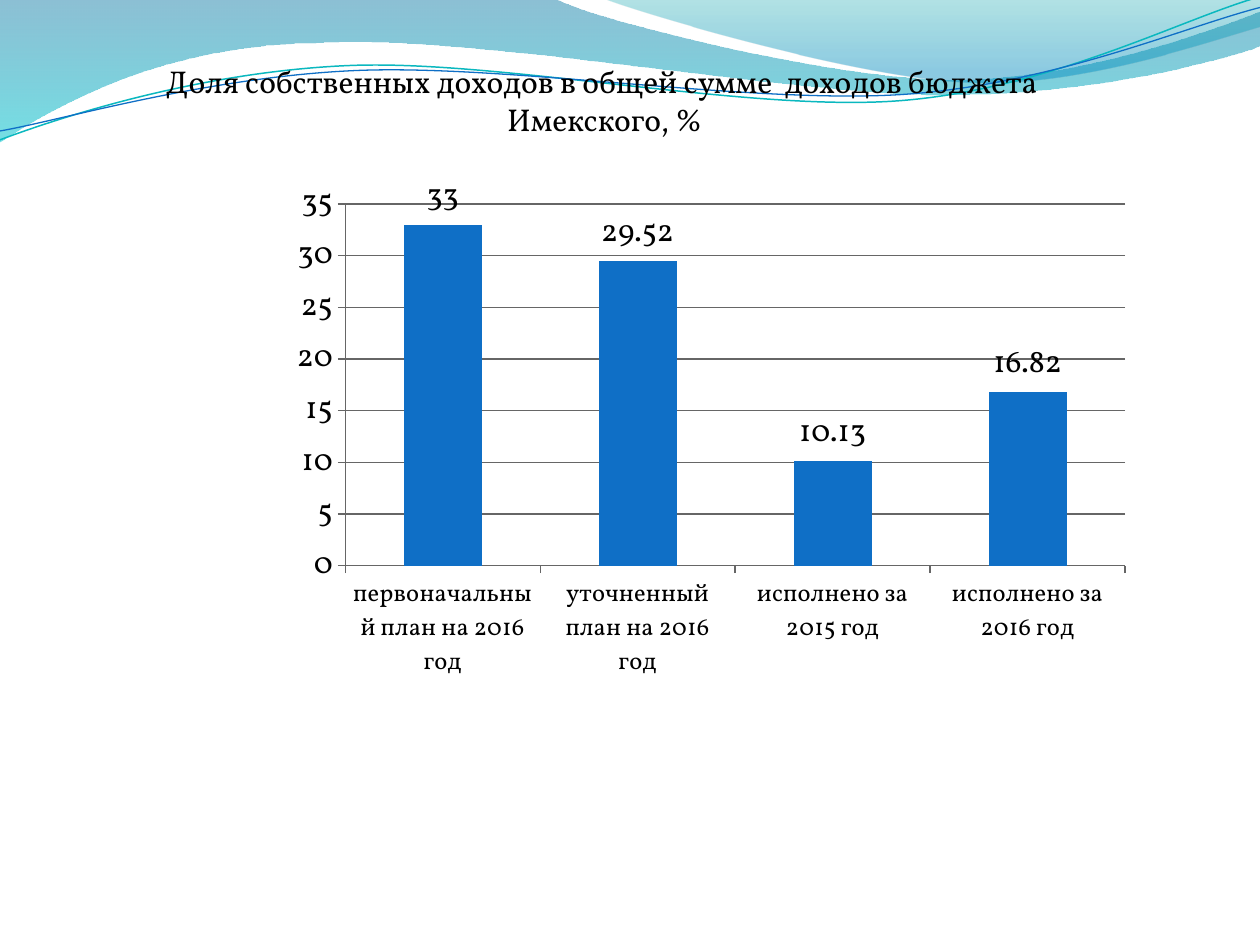
from dataclasses import dataclass
from math import cos, radians, sin

from lxml.etree import SubElement
from pptx import Presentation
from pptx.chart.data import CategoryChartData
from pptx.dml.color import RGBColor
from pptx.enum.chart import XL_CHART_TYPE as ChartType
from pptx.enum.chart import XL_LABEL_POSITION as LabelPosition
from pptx.enum.chart import XL_TICK_MARK as TickMark
from pptx.enum.text import MSO_ANCHOR as Anchor
from pptx.enum.text import MSO_AUTO_SIZE as AutoSize
from pptx.enum.text import PP_ALIGN as Align
from pptx.oxml import parse_xml
from pptx.oxml.ns import nsdecls, qn
from pptx.util import Inches, Pt

FONT = "Vollkorn"
BLACK, GRID_GREY, BLUE, TEAL = "000000", "666666", "0F6FC6", "0AB8BF"
CELL = Inches(1)  # the slide is a grid of 10 columns by 7.5 rows
COLUMNS, ROWS = 10, 7.5
LINE_TILT = 357.3

Point = tuple[float, float]


@dataclass(frozen=True)
class Box:
    column: float
    row: float
    columns: float
    rows: float

    def emu(self) -> list[int]:
        return [round(n * CELL) for n in (self.column, self.row, self.columns, self.rows)]


@dataclass(frozen=True)
class GradientStop:
    position: int
    color: str
    opacity: int


@dataclass(frozen=True)
class Band:
    """Segments hold one point for a line, three for a Bezier curve."""
    start: Point
    segments: tuple[tuple[Point, ...], ...]
    stops: tuple[GradientStop, ...]


@dataclass(frozen=True)
class WavyLine:
    start: Point
    segments: tuple[tuple[Point, ...], ...]
    center: Point
    color: str
    width: float


BANDS = (
    # Across the whole top
    Band((0, -0.01), (
        ((4.4, -0.01),),
        ((4.76, 0.17), (6.64, 0.63), (7.58, 0.63)),
        ((8.53, 0.63), (9.58, 0.26), (10, 0.09)),
        ((10.01, 0.36),),
        ((9.83, 0.44), (8.7, 0.76), (7.46, 0.75)),
        ((6.22, 0.75), (3.82, 0.28), (2.57, 0.34)),
        ((1.29, 0.35), (0.46, 0.83), (-0.01, 1.13)),
    ), (GradientStop(0, "0074A1", 45), GradientStop(100, "00C6CF", 55))),
    # At the top right
    Band((4.79, -0.01), (
        ((5.09, 0.11), (6.82, 0.62), (7.69, 0.65)),
        ((8.56, 0.69), (9.61, 0.32), (10, 0.21)),
        ((10, 0),),
    ), (GradientStop(0, "00A1A9", 30), GradientStop(80, "008BBF", 45))),
)
WAVY_LINES = (
    WavyLine((0, 1.11), (
        ((0.48, 0.93), (1.58, 0.57), (2.77, 0.52)),
        ((3.95, 0.47), (5.93, 0.89), (7.13, 0.8)),
        ((8.33, 0.71), (9.38, 0.15), (9.98, -0.02)),
    ), (4.99, 0.57), TEAL, 0.85),
    WavyLine((0, 1.04), (
        ((0.47, 0.96), (1.64, 0.61), (2.83, 0.56)),
        ((4.03, 0.51), (5.97, 0.83), (7.17, 0.75)),
        ((8.36, 0.67), (9.41, 0.21), (10, 0.06)),
    ), (5, 0.59), BLUE, 0.75),
)

TITLE_BOX = Box(0.27, 0.44, 9.06, 0.71)
TITLE_LINES = ("Доля собственных доходов в общей сумме  доходов бюджета ", "Имекского, %")

CHART_BOX = Box(0.9, 1.15, 8.27, 6.22)
PLOT_BOX = Box(1.84, 0.47, 6.19, 2.87)  # measured from the chart's corner
INCOME_SHARES = {
    "первоначальный план на 2016 год": 33,
    "уточненный план на 2016 год": 29.52,
    "исполнено за 2015 год": 10.13,
    "исполнено за 2016 год": 16.82,
}
SERIES = {"Series 1": (BLUE, tuple(INCOME_SHARES.values())),
          "Series 2": ("009DD9", ()),
          "Series 3": ("0BD0D9", ())}


def rgb(color: str) -> RGBColor:
    return RGBColor.from_string(color)


def set_font(font, size: float) -> None:
    font.name, font.size, font.bold = FONT, Pt(size), False
    font.color.rgb = rgb(BLACK)


def set_line(line, color: str, width: float) -> None:
    line.color.rgb, line.width = rgb(color), Pt(width)


def turn(point: Point, center: Point, degrees: float) -> Point:
    angle = radians(degrees)
    dx, dy = point[0] - center[0], point[1] - center[1]
    return (center[0] + dx * cos(angle) - dy * sin(angle),
            center[1] + dx * sin(angle) + dy * cos(angle))


def draw_outline(shapes, start: Point, segments, close: bool):
    """Lay a polygon through all points, then bend each three of a curve."""
    points = [(round(x * CELL), round(y * CELL))
              for x, y in (start, *(point for segment in segments for point in segment))]
    builder = shapes.build_freeform(*points[0])
    builder.add_line_segments(points[1:], close=close)
    shape = builder.convert_to_shape()
    shape.shadow.inherit = False
    sides = iter(shape.element.findall(".//" + qn("a:lnTo")))
    for segment in segments:
        group = [next(sides) for _ in segment]
        if len(group) == 3:
            curve = parse_xml(f'<a:cubicBezTo {nsdecls("a")}/>')
            group[0].addprevious(curve)
            for side in group:
                curve.append(side[0])
                side.getparent().remove(side)
    return shape


def draw_band(shapes, band: Band) -> None:
    shape = draw_outline(shapes, band.start, band.segments, True)
    shape.line.fill.background()
    stops = "".join(
        f'<a:gs pos="{stop.position * 1000}"><a:srgbClr val="{stop.color}">'
        f'<a:alpha val="{stop.opacity * 1000}"/></a:srgbClr></a:gs>'
        for stop in band.stops)
    gradient = parse_xml(
        f'<a:gradFill {nsdecls("a")} rotWithShape="1"><a:gsLst>{stops}</a:gsLst>'
        '<a:lin ang="5400000" scaled="0"/></a:gradFill>')
    shape.element.spPr.find(qn("a:custGeom")).addnext(gradient)


def draw_wavy_line(shapes, wave: WavyLine) -> None:
    """Level the points first; the shape's rotation tilts them back."""
    start = turn(wave.start, wave.center, -LINE_TILT)
    segments = [[turn(point, wave.center, -LINE_TILT) for point in segment]
                for segment in wave.segments]
    shape = draw_outline(shapes, start, segments, False)
    shape.rotation = LINE_TILT
    shape.fill.background()
    set_line(shape.line, wave.color, wave.width)


def write_title(slide) -> None:
    title = slide.shapes.title
    title.left, title.top, title.width, title.height = TITLE_BOX.emu()
    frame = title.text_frame
    frame.word_wrap, frame.vertical_anchor = True, Anchor.TOP
    frame.auto_size = AutoSize.SHAPE_TO_FIT_TEXT
    for index, text in enumerate(TITLE_LINES):
        paragraph = frame.add_paragraph() if index else frame.paragraphs[0]
        paragraph.alignment = Align.CENTER
        run = paragraph.add_run()
        run.text = text
        set_font(run.font, 18)
    # Bring the title in front of the waves
    title.element.getparent().append(title.element)


def place_plot(chart) -> None:
    """Fix the inner plot area at shares of the chart's size."""
    plot_area = chart.element.find(".//" + qn("c:plotArea"))
    for old in plot_area.findall(qn("c:layout")):
        plot_area.remove(old)
    layout = parse_xml(f'<c:layout {nsdecls("c")}><c:manualLayout/></c:layout>')
    settings = {"layoutTarget": "inner", "xMode": "edge", "yMode": "edge",
                "x": PLOT_BOX.column / CHART_BOX.columns, "y": PLOT_BOX.row / CHART_BOX.rows,
                "w": PLOT_BOX.columns / CHART_BOX.columns, "h": PLOT_BOX.rows / CHART_BOX.rows}
    for name, value in settings.items():
        SubElement(layout[0], qn(f"c:{name}")).set("val", str(value))
    plot_area.insert(0, layout)


def label_columns(series, values) -> None:
    for index, value in enumerate(values):
        label = series.points[index].data_label
        if index == 0:  # the first label is typed text
            run = label.text_frame.paragraphs[0].add_run()
            run.text = str(value)
            set_font(run.font, 18)
        else:
            set_font(label.font, 18)
        label.position = LabelPosition.OUTSIDE_END


def draw_chart(slide) -> None:
    data = CategoryChartData()
    data.categories = list(INCOME_SHARES)
    for name, (_, values) in SERIES.items():
        data.add_series(name, values)
    chart = slide.shapes.add_chart(ChartType.COLUMN_CLUSTERED, *CHART_BOX.emu(), data).chart
    chart.has_title = chart.has_legend = False
    set_font(chart.font, 18)
    place_plot(chart)

    # Columns and their values; a series without values takes no room
    plot = chart.plots[0]
    plot.gap_width, plot.vary_by_categories = 150, False
    for series, (color, values) in zip(plot.series, SERIES.values()):
        series.format.fill.solid()
        series.format.fill.fore_color.rgb = rgb(color)
        label_columns(series, values)
        if not values:
            element = series.format.fill._xPr.getparent()
            element.remove(element.find(qn("c:val")))

    # Axes and gridlines
    for axis, size in ((chart.category_axis, 14), (chart.value_axis, 18)):
        axis.major_tick_mark, axis.minor_tick_mark = TickMark.OUTSIDE, TickMark.NONE
        set_font(axis.tick_labels.font, size)
        set_line(axis.format.line, GRID_GREY, 0.75)
    scale = chart.value_axis
    scale.minimum_scale, scale.maximum_scale, scale.major_unit = 0, 35, 5
    scale.has_major_gridlines = True
    set_line(scale.major_gridlines.format.line, GRID_GREY, 0.75)


def main() -> None:
    presentation = Presentation()
    presentation.slide_width = round(COLUMNS * CELL)
    presentation.slide_height = round(ROWS * CELL)
    slide = presentation.slides.add_slide(presentation.slide_layouts[5])
    for band in BANDS:
        draw_band(slide.shapes, band)
    line_group = slide.shapes.add_group_shape()
    for wave in WAVY_LINES:
        draw_wavy_line(line_group.shapes, wave)
    write_title(slide)
    draw_chart(slide)
    presentation.save("out.pptx")


if __name__ == "__main__":
    main()
